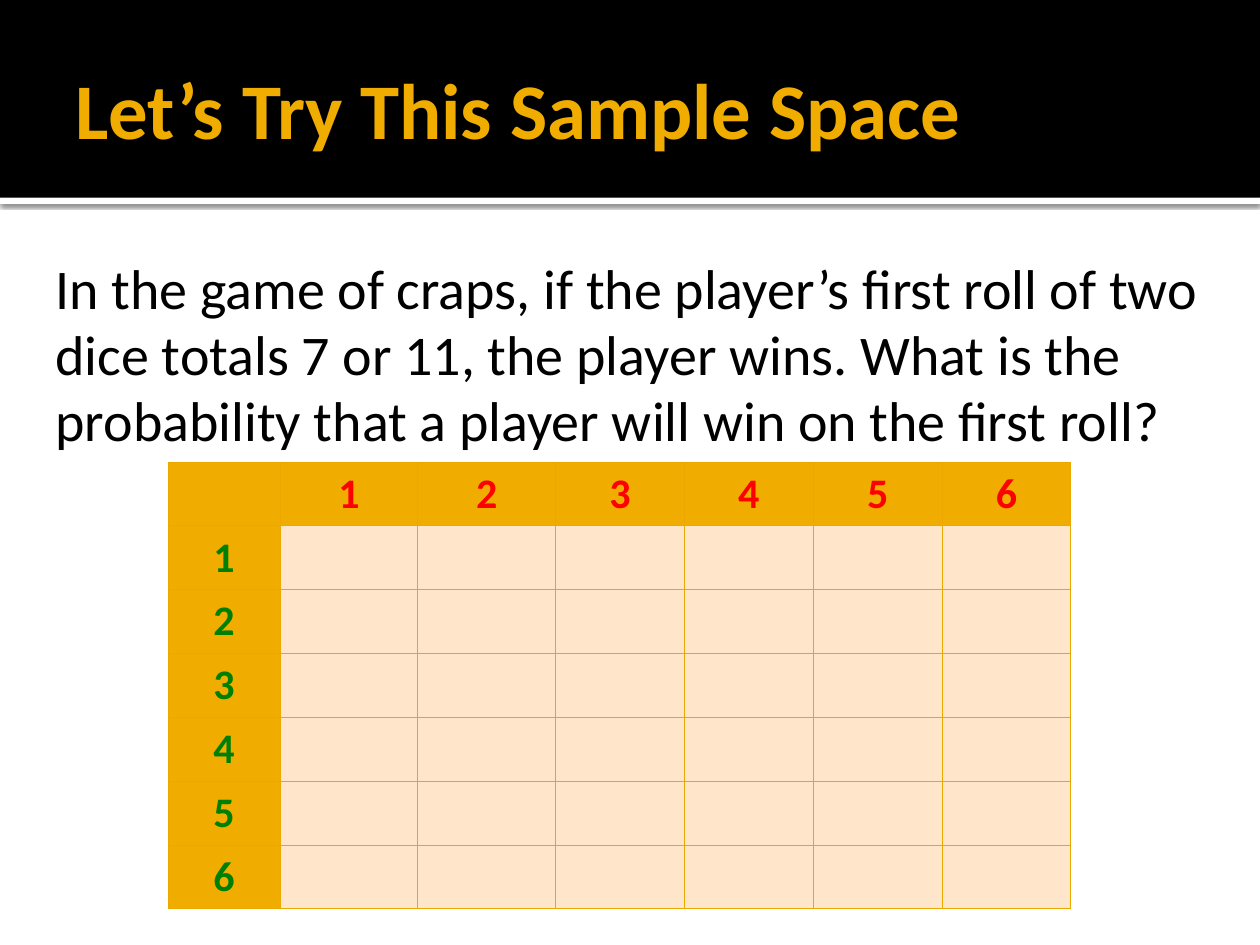
"""Builds a slide with a dice question and an empty six-by-six sample space table."""
from lxml.etree import SubElement
from pptx import Presentation
from pptx.dml.color import RGBColor
from pptx.enum.shapes import MSO_SHAPE as SHAPE
from pptx.enum.text import MSO_ANCHOR as ANCHOR, PP_ALIGN as ALIGN
from pptx.oxml import parse_xml
from pptx.oxml.ns import nsdecls, qn
from pptx.util import Pt

COLORS = {
    "white": "FFFFFF", "black": "000000", "gold": "F0AD00", "border": "EBA900",
    "cream": "FFE5CA", "red": "FF0000", "green": "008000",
}
FONT = "Calibri"
COL_WIDTHS = [64] + [78.8] * 2 + [73.6] * 4
ROW_HEIGHT = 36.5
FACES = 6


def rgb(name):
    return RGBColor.from_string(COLORS[name])


def set_font(p, size, color, bold=False):
    p.font.name, p.font.size, p.font.bold = FONT, Pt(size), bold
    p.font.color.rgb = rgb(color)


def add_bar(slide, top, height, color):
    sp = slide.shapes.add_shape(SHAPE.RECTANGLE, 0, Pt(top), Pt(720), Pt(height))
    sp.shadow.inherit = False
    sp.fill.solid()
    sp.fill.fore_color.rgb = rgb(color)
    sp.line.fill.background()
    return sp


def add_shadow(sp):
    effects = sp.element.spPr.find(qn("a:effectLst"))
    effects.append(parse_xml(
        f'<a:outerShdw {nsdecls("a")} blurRad="{Pt(2.5)}" dist="{Pt(0.8)}" dir="5400000" '
        f'rotWithShape="0"><a:srgbClr val="{COLORS["black"]}"><a:alpha val="60000"/>'
        '</a:srgbClr></a:outerShdw>'))


def add_text(slide, box, text, size, color, insets, anchor=ANCHOR.TOP, bold=False):
    tf = slide.shapes.add_textbox(*map(Pt, box)).text_frame
    tf.word_wrap = True
    tf.vertical_anchor = anchor
    tf.margin_left, tf.margin_top, tf.margin_right, tf.margin_bottom = map(Pt, insets)
    p = tf.paragraphs[0]
    p.text = text
    set_font(p, size, color, bold)
    return p


def style_cell(cell, fill):
    tcPr = cell._tc.get_or_add_tcPr()
    for side in ("lnL", "lnR", "lnT", "lnB"):
        ln = SubElement(tcPr, qn(f"a:{side}"), w=str(Pt(0.5)))
        SubElement(SubElement(ln, qn("a:solidFill")), qn("a:srgbClr"), val=COLORS["border"])
    cell.fill.solid()
    cell.fill.fore_color.rgb = rgb(fill)


def label_cell(cell, text, color):
    p = cell.text_frame.paragraphs[0]
    p.text = text
    p.alignment = ALIGN.CENTER
    set_font(p, 24, color, bold=True)


def add_sample_space(slide, left, top):
    size = FACES + 1
    table = slide.shapes.add_table(size, size, Pt(left), Pt(top), Pt(sum(COL_WIDTHS)),
                                   Pt(ROW_HEIGHT * size)).table
    for col, width in zip(table.columns, COL_WIDTHS):
        col.width = Pt(width)
    for row in table.rows:
        row.height = Pt(ROW_HEIGHT)
    for r in range(size):
        for c in range(size):
            style_cell(table.cell(r, c), "cream" if r and c else "gold")
    for face in range(1, size):
        label_cell(table.cell(0, face), str(face), "red")
        label_cell(table.cell(face, 0), str(face), "green")


def main():
    prs = Presentation()
    prs.slide_width, prs.slide_height = Pt(720), Pt(540)
    slide = prs.slides.add_slide(prs.slide_layouts[6])
    add_shadow(add_bar(slide, 113, 3.6, "white"))
    add_bar(slide, 0, 113, "black")
    add_text(slide, (36, 12.2, 648, 98.6), "Let’s Try This Sample Space", 45, "gold",
             (7.2, 3.6, 3.6, 3.6), ANCHOR.MIDDLE, bold=True)
    p = add_text(slide, (18, 139.7, 684, 124.6),
                 "In the game of craps, if the player’s first roll of two dice totals 7 or 11, "
                 "the player wins. What is the probability that a player will win on the "
                 "first roll?", 32, "black", (4.3, 7.2, 7.2, 3.6))
    p.space_before = Pt(3)
    p.line_spacing = 0.98
    p._p.get_or_add_pPr().set("marL", str(Pt(9.4)))
    add_sample_space(slide, 96, 264)
    prs.save("out.pptx")


if __name__ == "__main__":
    main()
